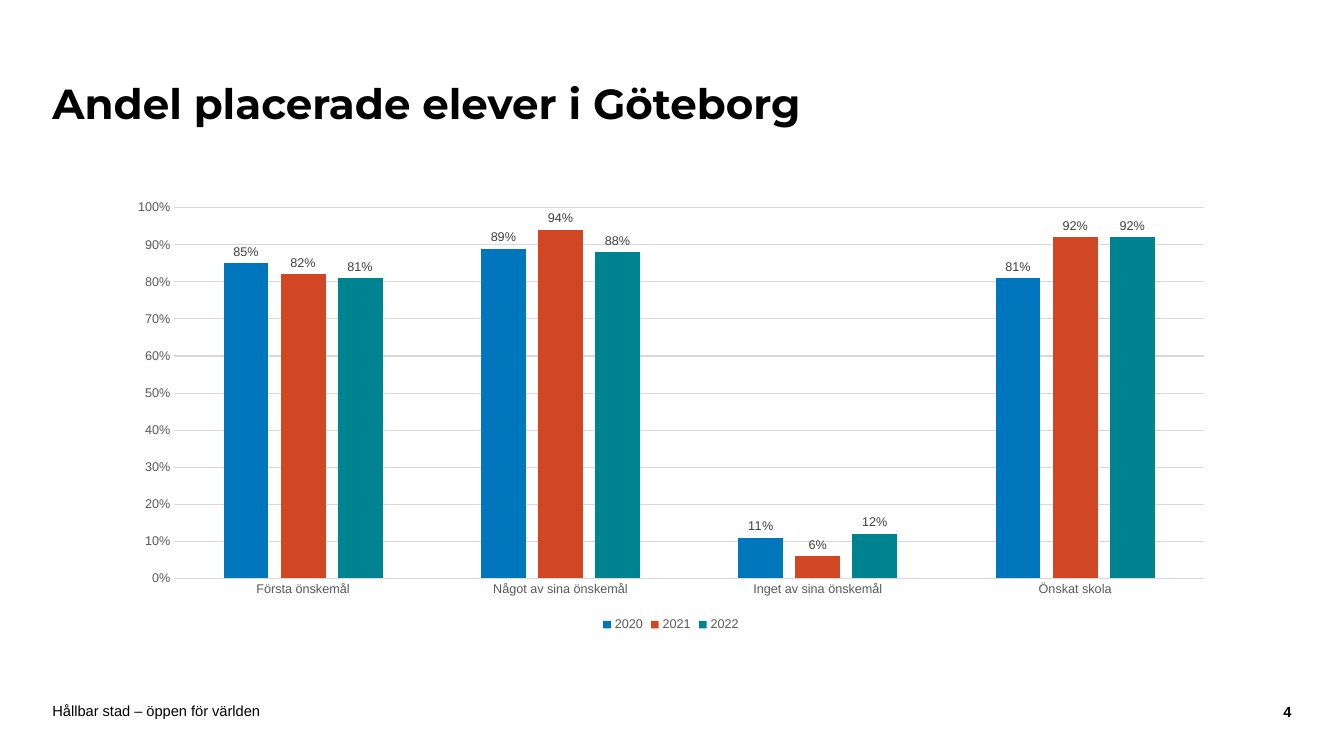
from pptx import Presentation
from pptx.chart.data import CategoryChartData
from pptx.dml.color import RGBColor
from pptx.enum import chart as ch, text as tx
from pptx.util import Inches, Pt

YEARS = {
    "2020": ("0077BC", (0.85, 0.89, 0.11, 0.81)),
    "2021": ("D24723", (0.82, 0.94, 0.06, 0.92)),
    "2022": ("008391", (0.81, 0.88, 0.12, 0.92)),
}
OUTCOMES = ("Första önskemål", "Något av sina önskemål",
            "Inget av sina önskemål", "Önskat skola")


def color(hex_code):
    return RGBColor.from_string(hex_code)


def box(left, top, width, height):
    return [Inches(n) for n in (left, top, width, height)]


def set_font(font, size, hex_code, name="Arial", bold=False):
    font.size, font.name, font.bold = Pt(size), name, bold
    font.color.rgb = color(hex_code)


def set_line(line, hex_code):
    line.width = Pt(0.75)
    line.color.rgb = color(hex_code)


def fill_frame(frame, content, align, inset=0):
    frame.margin_left = frame.margin_right = 0
    frame.margin_top = frame.margin_bottom = Inches(inset)
    frame.vertical_anchor = tx.MSO_ANCHOR.MIDDLE
    frame.word_wrap = True
    frame.auto_size = tx.MSO_AUTO_SIZE.NONE
    paragraph = frame.paragraphs[0]
    paragraph.text = content
    paragraph.alignment = align
    return paragraph


def add_title(slide, content):
    title = slide.shapes.title
    title.left, title.top, title.width, title.height = box(0.52, 0.42, 10.03, 1.26)
    heading = fill_frame(title.text_frame, content, tx.PP_ALIGN.LEFT, 0.05)
    heading.line_spacing = 0.9
    set_font(heading.font, 30, "000000", "Montserrat", True)


def add_footer(slide, content, place, align, bold=False):
    footer = slide.shapes.add_textbox(*box(*place))
    set_font(fill_frame(footer.text_frame, content, align).font, 10.5, "000000", bold=bold)


def style_axis(axis):
    axis.major_tick_mark = axis.minor_tick_mark = ch.XL_TICK_MARK.NONE
    set_font(axis.tick_labels.font, 9, "595959")


def style_series(series, hex_code):
    series.format.fill.solid()
    series.format.fill.fore_color.rgb = color(hex_code)
    series.invert_if_negative = False
    labels = series.data_labels
    labels.show_value = True
    labels.position = ch.XL_LABEL_POSITION.OUTSIDE_END
    labels.number_format, labels.number_format_is_linked = "0%", False
    set_font(labels.font, 9, "404040")


def add_placement_chart(slide):
    data = CategoryChartData(number_format="0%")
    data.categories = OUTCOMES
    for year, (_, shares) in YEARS.items():
        data.add_series(year, shares)
    chart = slide.shapes.add_chart(
        ch.XL_CHART_TYPE.COLUMN_CLUSTERED, *box(1.15, 1.9, 11.01, 4.41), data).chart
    set_font(chart.font, 10, "000000")
    chart.has_title = False

    style_axis(chart.category_axis)
    set_line(chart.category_axis.format.line, "D9D9D9")
    shares_axis = chart.value_axis
    style_axis(shares_axis)
    shares_axis.minimum_scale, shares_axis.maximum_scale = 0, 1
    shares_axis.major_unit = 0.1
    shares_axis.tick_labels.number_format = "0%"
    shares_axis.tick_labels.number_format_is_linked = False
    shares_axis.format.line.fill.background()
    set_line(shares_axis.major_gridlines.format.line, "D9D9D9")

    chart.has_legend = True
    chart.legend.position = ch.XL_LEGEND_POSITION.BOTTOM
    chart.legend.include_in_layout = False
    set_font(chart.legend.font, 9, "595959")

    columns = chart.plots[0]
    columns.gap_width, columns.overlap = 219, -27
    columns.vary_by_categories = False
    for series in columns.series:
        style_series(series, YEARS[series.name][0])


def main():
    deck = Presentation()
    deck.slide_width, deck.slide_height = Inches(13.33), Inches(7.5)
    slide = deck.slides.add_slide(deck.slide_layouts[5])
    add_title(slide, "Andel placerade elever i Göteborg")
    add_placement_chart(slide)
    add_footer(slide, "Hållbar stad – öppen för världen",
               (0.52, 6.97, 9.45, 0.16), tx.PP_ALIGN.LEFT)
    add_footer(slide, "4", (12.17, 6.98, 0.64, 0.16), tx.PP_ALIGN.RIGHT, True)
    deck.save("out.pptx")


if __name__ == "__main__":
    main()
